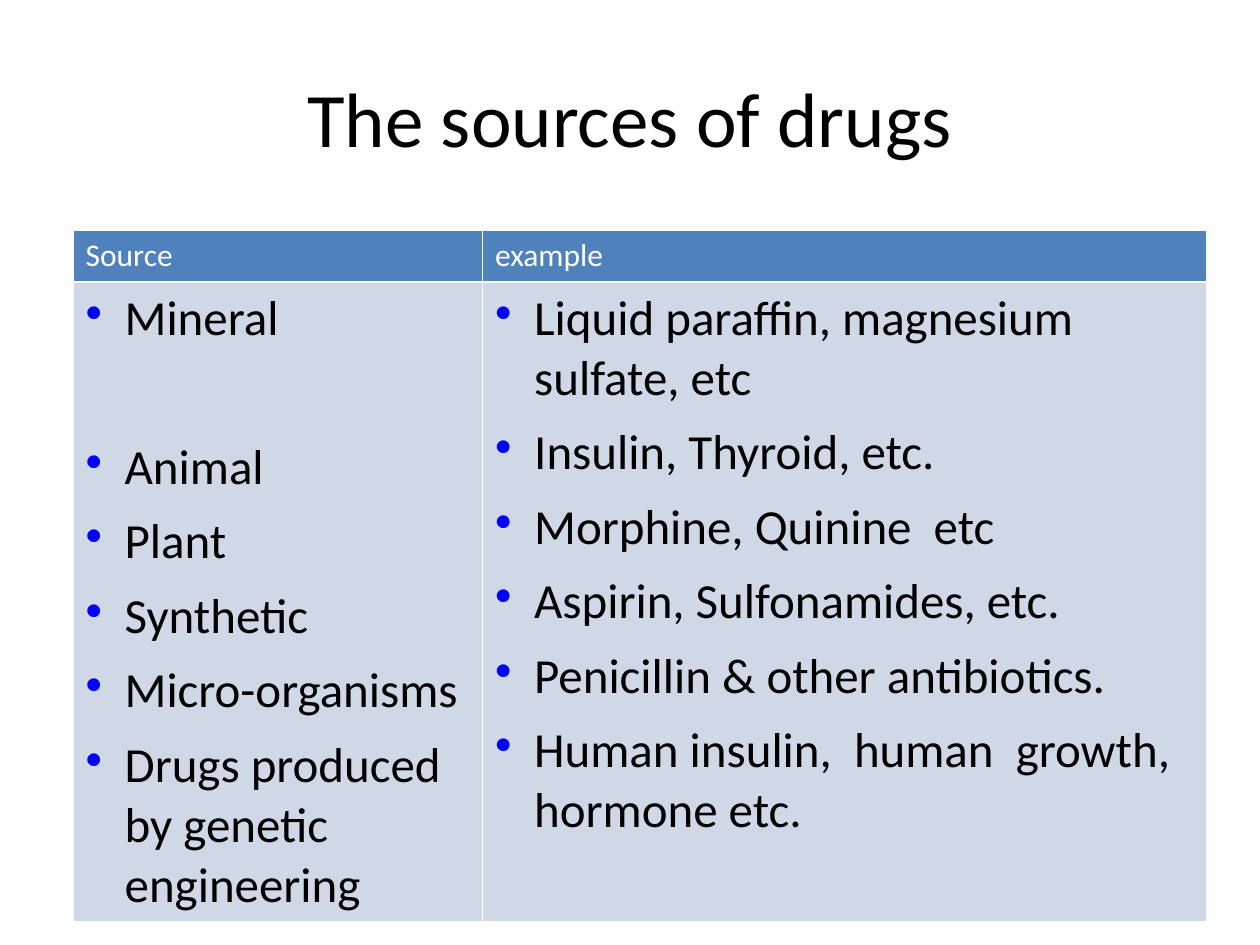
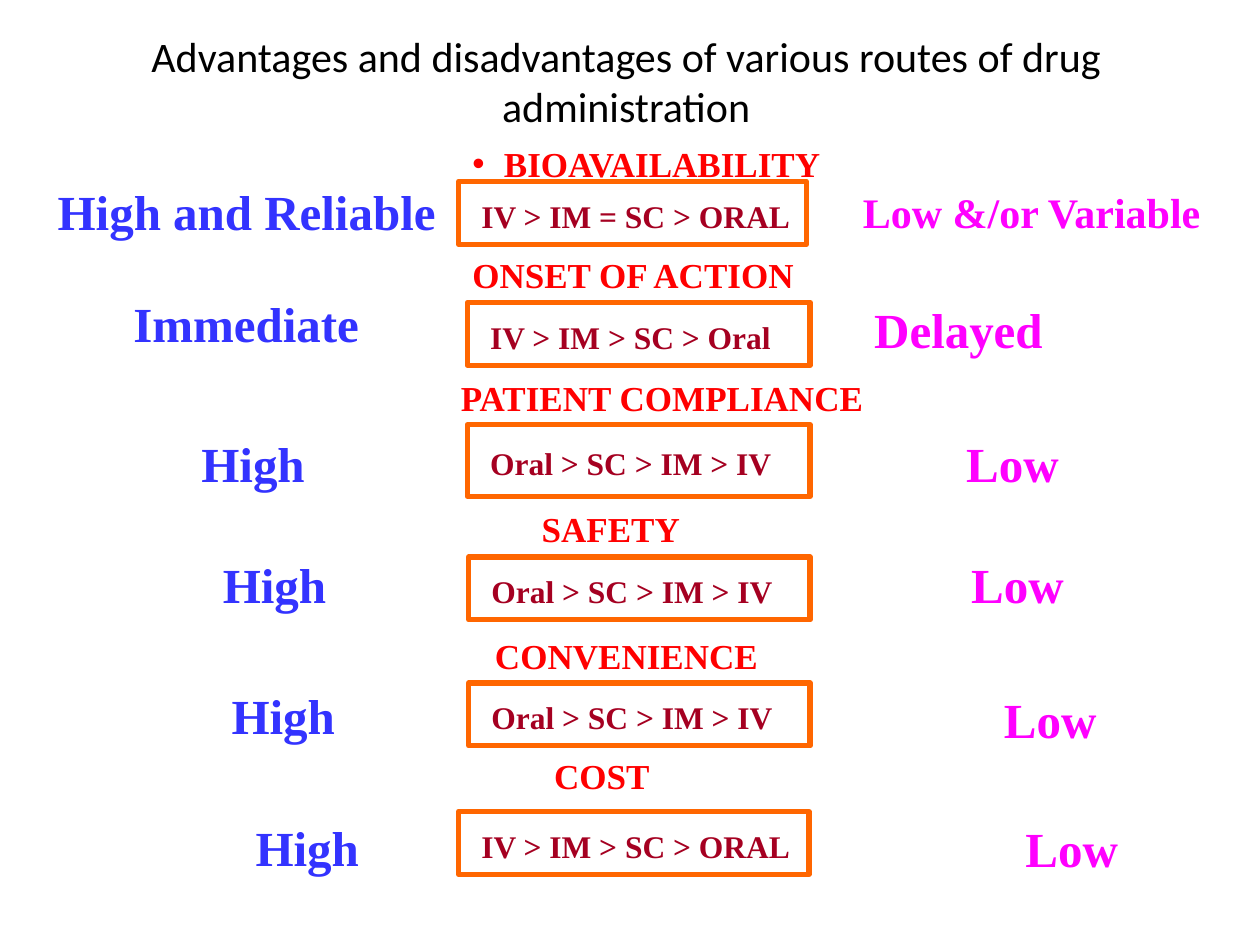
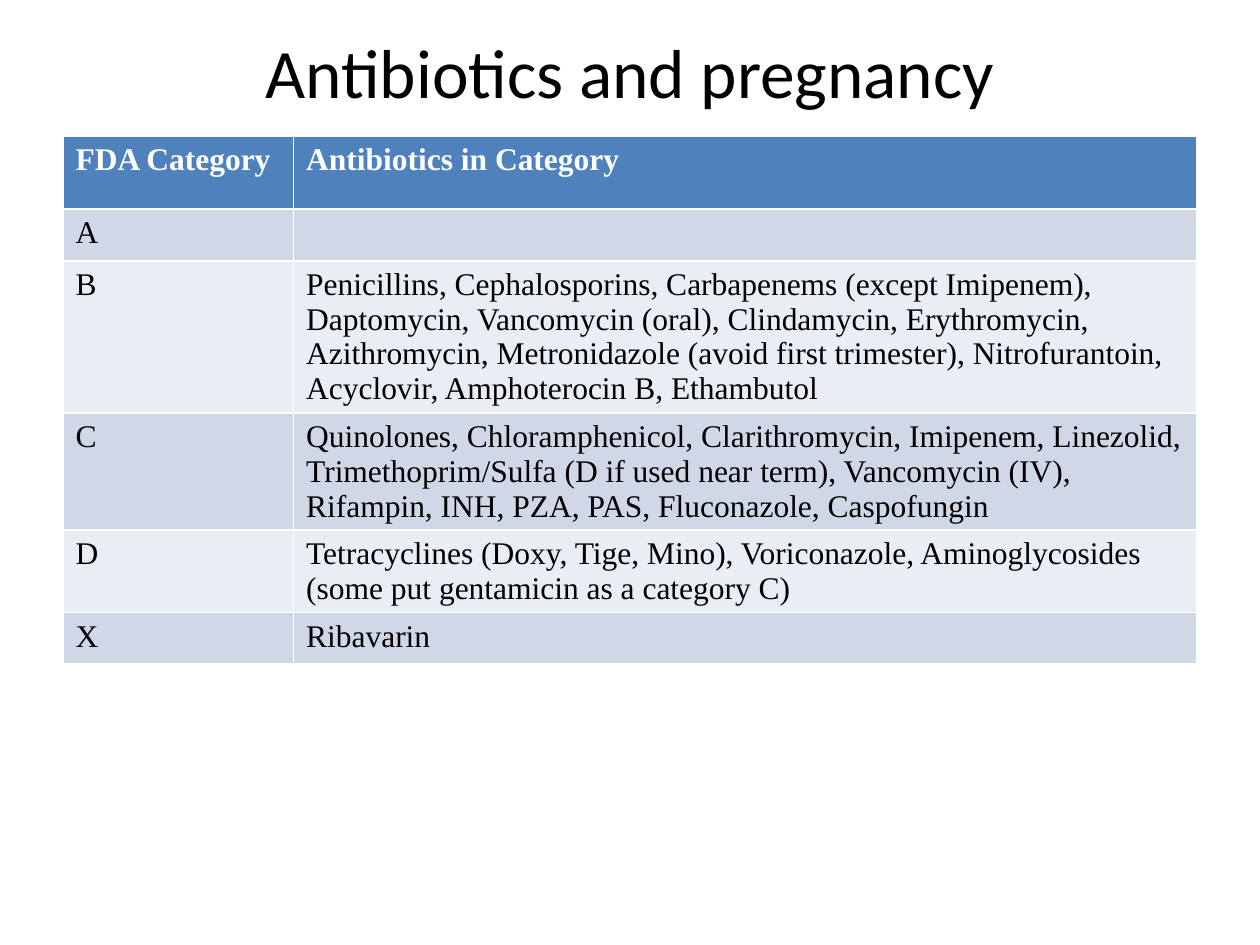
from lxml import etree
from pptx import Presentation
from pptx.dml.color import RGBColor
from pptx.enum.shapes import MSO_SHAPE
from pptx.enum.text import MSO_ANCHOR, MSO_AUTO_SIZE, PP_ALIGN
from pptx.oxml.ns import qn
from pptx.util import Inches, Pt

RECTANGLE = MSO_SHAPE.RECTANGLE
MIDDLE = MSO_ANCHOR.MIDDLE
LEFT, CENTER = PP_ALIGN.LEFT, PP_ALIGN.CENTER
FIXED, FIT_SHAPE = MSO_AUTO_SIZE.NONE, MSO_AUTO_SIZE.SHAPE_TO_FIT_TEXT

COLORS = {
    "black": "000000",
    "white": "FFFFFF",
    "header": "4F81BD",
    "band_dark": "D0D8E8",
    "band_light": "E9EDF4",
    "bullet": "0000FF",
    "heading": "FF0000",
    "ranking": "A50021",
    "frame": "FF6600",
    "best": "3333FF",
    "worst": "FF00FF",
}
SANS, SERIF = "Calibri", "Times New Roman"
TITLE_ONLY, TITLE_AND_BODY = 5, 1

ITEM_GAP = 8.4
BLANK_LINE_GAP = 51
HANGING = 0.31

SOURCES_TITLE = "The sources of drugs"
SOURCE_HEADERS = ["Source", "example"]
SOURCE_LISTS = [
    [
        ("Mineral", 0),
        ("Animal", BLANK_LINE_GAP),
        ("Plant", ITEM_GAP),
        ("Synthetic", ITEM_GAP),
        ("Micro-organisms", ITEM_GAP),
        ("Drugs produced by genetic  engineering", ITEM_GAP),
    ],
    [
        ("Liquid paraffin, magnesium sulfate, etc", 0),
        ("Insulin, Thyroid, etc.", ITEM_GAP),
        ("Morphine, Quinine  etc", ITEM_GAP),
        ("Aspirin, Sulfonamides, etc.", ITEM_GAP),
        ("Penicillin & other antibiotics.", ITEM_GAP),
        ("Human insulin,  human  growth, hormone etc.", ITEM_GAP),
    ],
]

ROUTES_TITLE = "Advantages and disadvantages of various routes of drug administration"
ROUTES = [
    {"heading": ("BIOAVAILABILITY", 0.62, 1.08, 6.02),
     "ranking": ("IV > IM = SC > ORAL", 3.64, 1.44, 2.76, 0.5),
     "best": ("High and Reliable", 0.36, 1.39, 3.2),
     "worst": ("Low &/or Variable", 6.75, 1.43, 3.18)},
    {"heading": ("ONSET OF ACTION", 3.65, 1.96, 2.78),
     "ranking": ("IV > IM > SC > Oral", 3.71, 2.4, 2.72, 0.5),
     "best": ("Immediate", 0.96, 2.28, 1.99),
     "worst": ("Delayed", 6.84, 2.33, 1.54)},
    {"heading": ("PATIENT COMPLIANCE", 3.56, 2.94, 3.43),
     "ranking": ("Oral > SC > IM > IV", 3.71, 3.37, 2.72, 0.57),
     "best": ("High", 1.5, 3.39, 1.02),
     "worst": ("Low", 7.57, 3.39, 0.94)},
    {"heading": ("SAFETY", 4.2, 3.98, 1.31),
     "ranking": ("Oral > SC > IM > IV", 3.72, 4.42, 2.71, 0.5),
     "best": ("High", 1.67, 4.35, 1.02),
     "worst": ("Low", 7.61, 4.35, 0.94)},
    {"heading": ("CONVENIENCE", 3.83, 4.99, 2.31),
     "ranking": ("Oral > SC > IM > IV", 3.72, 5.42, 2.71, 0.5),
     "best": ("High", 1.74, 5.39, 1.03),
     "worst": ("Low", 7.87, 5.42, 0.94)},
    {"heading": ("COST", 4.3, 5.94, 0.97),
     "ranking": ("IV > IM > SC > ORAL", 3.64, 6.44, 2.78, 0.5),
     "best": ("High", 1.93, 6.44, 1.03),
     "worst": ("Low", 8.04, 6.45, 0.94)},
]
HEADING_FORMAT = {"size": 20, "font": SERIF, "color": "heading", "bold": True}

PREGNANCY_TITLE = "Antibiotics and pregnancy"
PREGNANCY_ROWS = [
    ("FDA Category", "Antibiotics in Category"),
    ("A", ""),
    ("B", "Penicillins, Cephalosporins, Carbapenems (except Imipenem), Daptomycin, "
          "Vancomycin (oral), Clindamycin, Erythromycin, Azithromycin, Metronidazole "
          "(avoid first trimester), Nitrofurantoin, Acyclovir, Amphoterocin B, Ethambutol"),
    ("C", "Quinolones, Chloramphenicol, Clarithromycin, Imipenem, Linezolid, "
          "Trimethoprim/Sulfa (D if used near term), Vancomycin (IV), Rifampin, INH, "
          "PZA, PAS, Fluconazole, Caspofungin"),
    ("D", "Tetracyclines (Doxy, Tige, Mino), Voriconazole, Aminoglycosides "
          "(some put gentamicin as a category C)"),
    ("X", "Ribavarin"),
]
PREGNANCY_HEIGHTS = [0.58, 0.41, 1.2, 0.93, 0.65, 0.41]


def rgb(name):
    return RGBColor.from_string(COLORS[name])


def write(paragraph, text, size=18, font=SANS, color="black", bold=False,
          align=LEFT, space_before=0):
    paragraph.alignment = align
    paragraph.space_before = Pt(space_before)
    run = paragraph.add_run()
    run.text = text
    run.font.size = Pt(size)
    run.font.name = font
    run.font.bold = bold
    run.font.color.rgb = rgb(color)


def add_bullet(paragraph):
    properties = paragraph._p.get_or_add_pPr()
    properties.set("marL", str(Inches(HANGING)))
    properties.set("indent", str(-Inches(HANGING)))
    bullet_color = etree.SubElement(properties, qn("a:buClr"))
    etree.SubElement(bullet_color, qn("a:srgbClr"), val=COLORS["bullet"])
    etree.SubElement(properties, qn("a:buChar"), char="•")


def place(shape, left, top, width, height):
    shape.left, shape.top = Inches(left), Inches(top)
    shape.width, shape.height = Inches(width), Inches(height)


def add_titled_slide(presentation, text, box, size, layout=TITLE_ONLY):
    slide = presentation.slides.add_slide(presentation.slide_layouts[layout])
    title = slide.shapes.title
    place(title, *box)
    title.text_frame.auto_size = FIXED
    title.text_frame.vertical_anchor = MIDDLE
    write(title.text_frame.paragraphs[0], text, size=size, align=CENTER)
    return slide


def add_grid(slide, left, top, widths, heights):
    frame = slide.shapes.add_table(
        len(heights), len(widths), Inches(left), Inches(top),
        Inches(sum(widths)), Inches(sum(heights)))
    table = frame.table
    for column, width in zip(table.columns, widths):
        column.width = Inches(width)
    bands = ["band_light", "band_dark"]
    for index, (row, height) in enumerate(zip(table.rows, heights)):
        row.height = Inches(height)
        for cell in row.cells:
            cell.fill.solid()
            cell.fill.fore_color.rgb = rgb(bands[index % 2] if index else "header")
    return table


def add_label(slide, text, left, top, width, height, wrap=False, **text_format):
    box = slide.shapes.add_textbox(
        Inches(left), Inches(top), Inches(width), Inches(height))
    box.text_frame.word_wrap = wrap
    box.text_frame.auto_size = FIT_SHAPE
    write(box.text_frame.paragraphs[0], text, **text_format)


def add_ranking(slide, text, left, top, width, height):
    box = slide.shapes.add_shape(
        RECTANGLE, Inches(left), Inches(top), Inches(width), Inches(height))
    box.shadow.inherit = False
    box.fill.background()
    box.line.color.rgb = rgb("frame")
    box.line.width = Pt(3)
    frame = box.text_frame
    frame.word_wrap = True
    frame.vertical_anchor = MIDDLE
    frame.margin_left, frame.margin_right = Inches(0.18), Inches(0.05)
    frame.margin_top, frame.margin_bottom = Inches(0.09), Inches(0.05)
    write(frame.paragraphs[0], text, font=SERIF, color="ranking", bold=True)


def build_sources(presentation):
    slide = add_titled_slide(presentation, SOURCES_TITLE, (0.5, 0.3, 9, 1.25), 44)
    table = add_grid(slide, 0.58, 1.83, [3.25, 5.75], [0.41, 5.07])
    for column, (header, items) in enumerate(zip(SOURCE_HEADERS, SOURCE_LISTS)):
        write(table.cell(0, column).text_frame.paragraphs[0], header, color="white")
        frame = table.cell(1, column).text_frame
        for index, (text, gap) in enumerate(items):
            paragraph = frame.add_paragraph() if index else frame.paragraphs[0]
            add_bullet(paragraph)
            write(paragraph, text, size=28, space_before=gap)


def build_routes(presentation):
    slide = add_titled_slide(
        presentation, ROUTES_TITLE, (0.47, 0.25, 9, 0.78), 24, TITLE_AND_BODY)
    for index, route in enumerate(ROUTES):
        if index == 0:
            text, *box = route["heading"]
            body = slide.placeholders[1]
            place(body, *box, 0.44)
            body.text_frame.word_wrap = False
            body.text_frame.auto_size = FIT_SHAPE
            paragraph = body.text_frame.paragraphs[0]
            paragraph.level = 6
            write(paragraph, text, align=CENTER, **HEADING_FORMAT)
        else:
            add_label(slide, *route["heading"], 0.44, **HEADING_FORMAT)
        add_ranking(slide, *route["ranking"])
        add_label(slide, *route["best"], 0.57,
                  size=28, font=SERIF, color="best", bold=True)
        add_label(slide, *route["worst"], 0.57 if index else 0.5, wrap=index == 0,
                  size=28 if index else 24, font=SERIF, color="worst", bold=True)


def build_pregnancy(presentation):
    slide = add_titled_slide(presentation, PREGNANCY_TITLE, (0.5, 0.3, 9, 0.53), 39.6)
    table = add_grid(slide, 0.5, 1.08, [1.83, 7.17], PREGNANCY_HEIGHTS)
    for row, texts in enumerate(PREGNANCY_ROWS):
        for column, text in enumerate(texts):
            if text:
                write(table.cell(row, column).text_frame.paragraphs[0], text,
                      font=SERIF, color="black" if row else "white", bold=row == 0)


def main():
    presentation = Presentation()
    presentation.slide_width, presentation.slide_height = Inches(10), Inches(7.5)
    build_sources(presentation)
    build_routes(presentation)
    build_pregnancy(presentation)
    presentation.save("out.pptx")


if __name__ == "__main__":
    main()
